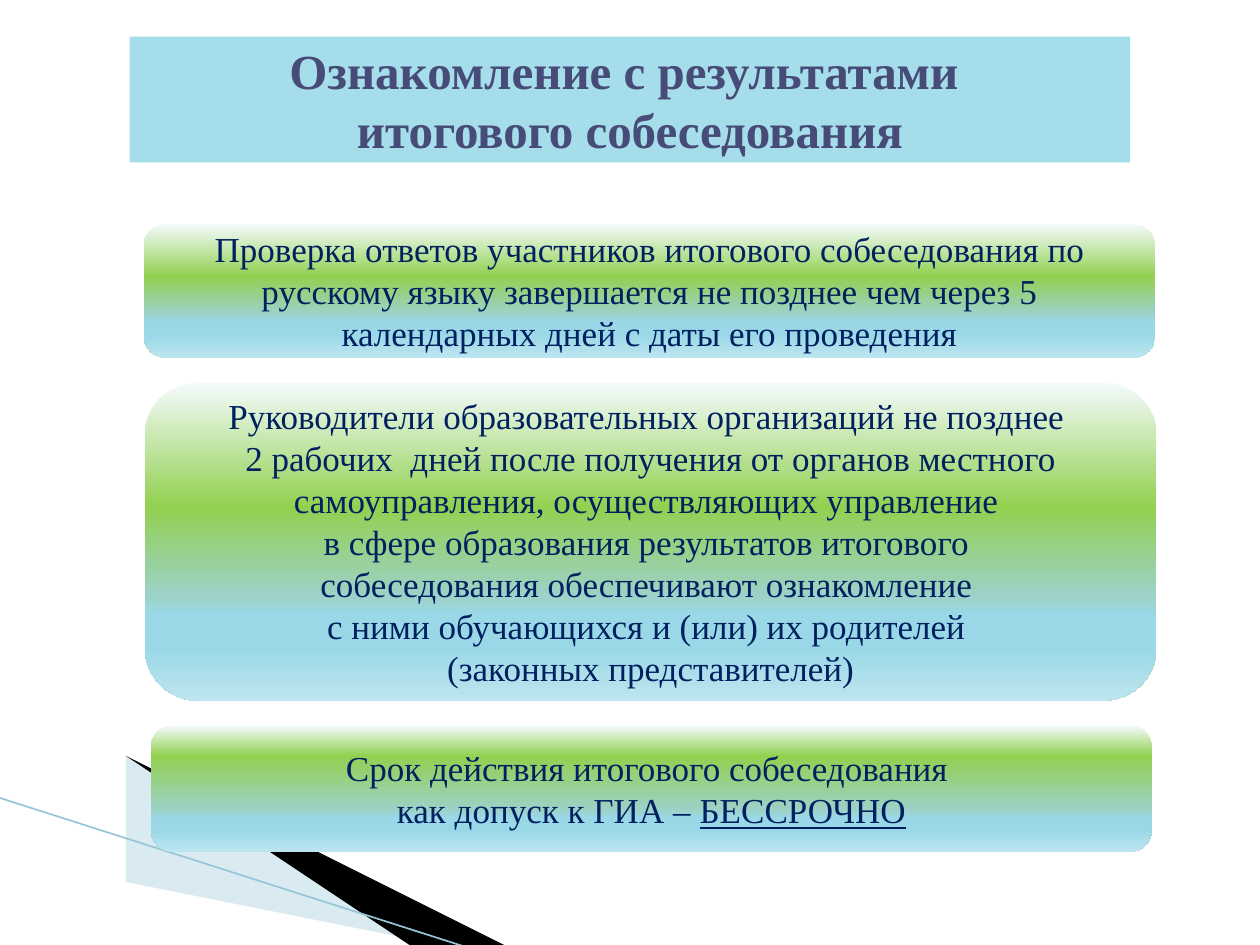
from dataclasses import dataclass

from lxml import etree
from pptx import Presentation
from pptx import util as u
from pptx.dml.color import RGBColor
from pptx.enum import shapes, text
from pptx.oxml import ns

WIDTH, HEIGHT = 10, 7.5


@dataclass(frozen=True)
class Theme:
    font: str = "Times New Roman"
    title_size: int = 28
    body_size: int = 20
    title_color: str = "474B78"
    title_fill: str = "A6DDEA"
    body_color: str = "002060"
    pale_wedge: str = "A0CBDC"
    dark_wedge: str = "000000"
    edge: str = "97C5D8"
    glow: str = "F4FBFC"
    green: str = "92D050"
    lower_stops: tuple = ((67, "9CD2C7"), (73, "9BD8E7"), (83, "9BD8E7"), (100, "BCE5EF"))


THEME = Theme()


def rgb(value):
    return RGBColor.from_string(value)


def fill_solid(shape, color, opacity=100):
    shape.fill.solid()
    shape.fill.fore_color.rgb = rgb(color)
    if opacity < 100:
        tint = shape._element.spPr.find(".//" + ns.qn("a:srgbClr"))
        etree.SubElement(tint, ns.qn("a:alpha"), val=str(opacity * 1000))


def fill_gradient(shape, stops):
    """Fill from top to bottom with (percent, colour) stops."""
    shape.fill.gradient()
    shape.fill.gradient_angle = 270
    stop_list = shape._element.spPr.find(".//" + ns.qn("a:gsLst"))
    for old_stop in list(stop_list):
        stop_list.remove(old_stop)
    for percent, color in stops:
        stop = etree.SubElement(stop_list, ns.qn("a:gs"), pos=str(percent * 1000))
        etree.SubElement(stop, ns.qn("a:srgbClr"), val=color)


def add_wedge(slide, points, color, opacity=100):
    start, *rest = points
    builder = slide.shapes.build_freeform(*start, scale=u.Inches(1))
    builder.add_line_segments(rest, close=True)
    wedge = builder.convert_to_shape()
    wedge.shadow.inherit = False
    wedge.line.fill.background()
    fill_solid(wedge, color, opacity)


def add_edge(slide, start, end):
    edge = slide.shapes.add_connector(
        shapes.MSO_CONNECTOR.STRAIGHT, *(u.Inches(v) for v in (*start, *end)))
    edge.line.color.rgb = rgb(THEME.edge)
    edge.line.width = u.Pt(0.95)
    etree.SubElement(edge._element.spPr, ns.qn("a:effectLst"))


def add_panel(slide, kind, place, paragraphs, size, color, bold=False):
    """Add a centred text panel; each paragraph is a list of runs."""
    panel = slide.shapes.add_shape(kind, *(u.Inches(v) for v in place))
    panel.shadow.inherit = False
    panel.line.fill.background()
    frame = panel.text_frame
    frame.word_wrap = True
    frame.vertical_anchor = text.MSO_ANCHOR.MIDDLE
    for index, pieces in enumerate(paragraphs):
        paragraph = frame.add_paragraph() if index else frame.paragraphs[0]
        paragraph.alignment = text.PP_ALIGN.CENTER
        for piece in pieces:
            run = paragraph.add_run()
            run.text = piece
            run.font.name = THEME.font
            run.font.size = u.Pt(size)
            run.font.bold = bold
            run.font.color.rgb = rgb(color)
    return panel


def add_title(slide, place, lines):
    title = add_panel(slide, shapes.MSO_SHAPE.RECTANGLE, place, [[line] for line in lines],
                      THEME.title_size, THEME.title_color, bold=True)
    fill_solid(title, THEME.title_fill)


def add_rule(slide, place, paragraphs, green_at=39):
    rule = add_panel(slide, shapes.MSO_SHAPE.ROUNDED_RECTANGLE, place, paragraphs,
                     THEME.body_size, THEME.body_color)
    fill_gradient(rule, ((0, THEME.glow), (green_at, THEME.green), *THEME.lower_stops))
    return rule


def main():
    deck = Presentation()
    deck.slide_width, deck.slide_height = u.Inches(WIDTH), u.Inches(HEIGHT)
    slide = deck.slides.add_slide(deck.slide_layouts[6])

    # Corner decoration
    add_wedge(slide, [(0.55, 6.51), (5.95, 7.51), (4.56, 7.51), (0.55, 6.5)],
              THEME.pale_wedge, opacity=40)
    add_wedge(slide, [(0.53, 6.49), (4.57, 7.51), (3.72, 7.52), (0.54, 6.5)],
              THEME.dark_wedge)
    add_edge(slide, (-0.01, 6.33), (3.71, 7.52))

    # Checking and announcing the results
    add_rule(slide, (1.14, 1.78, 8.03, 1.06), [[
        "Проверка ответов участников итогового собеседования по русскому языку "
        "завершается не позднее чем через 5 календарных дней с даты его проведения"]])
    add_rule(slide, (1.15, 3.04, 8.03, 2.52), [
        ["Руководители образовательных организаций не позднее "],
        ["2 рабочих  дней после получения от органов местного самоуправления, "
         "осуществляющих управление "],
        ["в сфере образования результатов итогового "],
        ["собеседования обеспечивают ознакомление "],
        ["с ними обучающихся и (или) их родителей "],
        ["(законных представителей)"],
    ])

    # Title, centred across the slide
    title_width = 7.94
    add_title(slide, ((WIDTH - title_width) / 2, 0.29, title_width, 1),
              ["Ознакомление с результатами ", "итогового собеседования"])

    # Validity period
    validity = add_rule(slide, (1.2, 5.76, title_width, 1), [
        ["Срок действия итогового собеседования "],
        ["как допуск к ГИА – ", "БЕССРОЧНО"],
    ], green_at=24)
    validity.text_frame.paragraphs[-1].runs[-1].font.underline = True

    deck.save("out.pptx")


if __name__ == "__main__":
    main()
